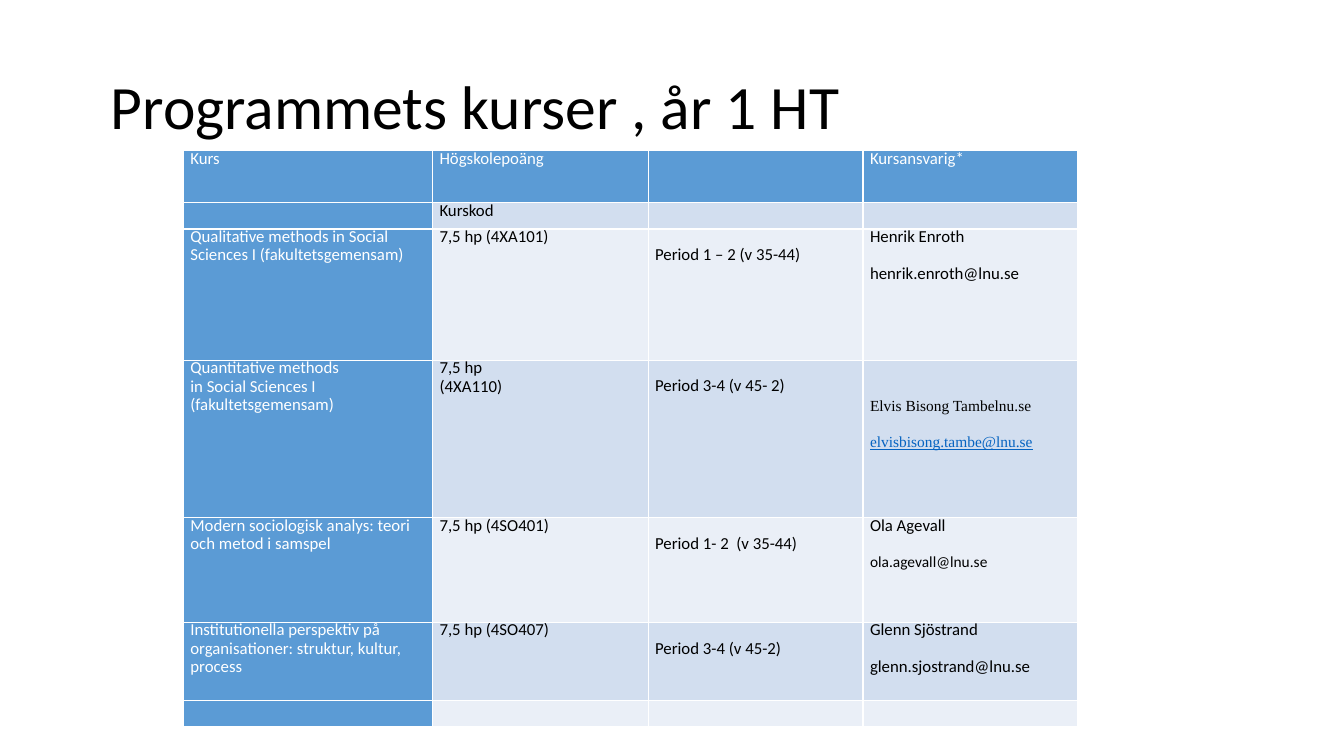
from dataclasses import dataclass

from lxml.etree import SubElement
from pptx import Presentation
from pptx.dml.color import RGBColor
from pptx.enum.text import MSO_ANCHOR
from pptx.oxml.ns import qn
from pptx.util import Pt

BLACK = RGBColor(0x00, 0x00, 0x00)
WHITE = RGBColor(0xFF, 0xFF, 0xFF)
BLUE = RGBColor(0x5B, 0x9B, 0xD5)
DARK_BAND = RGBColor(0xD2, 0xDE, 0xEF)
LIGHT_BAND = RGBColor(0xEA, 0xEF, 0xF7)
LINK_BLUE = RGBColor(0x05, 0x63, 0xC1)

LINE = 13
ROW_UNIT = 18.72
COLUMN_WIDTHS = [178, 154, 153.5, 153.5]
ROW_UNITS = [2, 1, 5, 6, 4, 3, 1]


@dataclass
class Entry:
    text: str
    gap: int = 0
    size: int = 12
    font: str = "Calibri"
    color: RGBColor = BLACK
    underline: bool = False


def period(text):
    return [Entry(text, gap=1)]


def contact(name, address, size=12):
    return [Entry(name), Entry(address, gap=1, size=size)]


def plain(*lines):
    return [Entry(line) for line in lines]


COURSES = [
    [plain("Kurs"), plain("Högskolepoäng"), [], plain("Kursansvarig*")],
    [[], plain("Kurskod"), [], []],
    [
        plain("Qualitative methods in Social Sciences I (fakultetsgemensam)"),
        plain("7,5 hp (4XA101)"),
        period("Period 1 – 2 (v 35-44)"),
        contact("Henrik Enroth", "henrik.enroth@lnu.se"),
    ],
    [
        plain("Quantitative methods", "in Social Sciences I (fakultetsgemensam)"),
        plain("7,5 hp", "(4XA110)"),
        period("Period 3-4 (v 45- 2)"),
        [
            Entry("Elvis Bisong Tambelnu.se", 2, 11, "Times New Roman"),
            Entry("elvisbisong.tambe@lnu.se", 1, 11, "Times New Roman", LINK_BLUE, True),
        ],
    ],
    [
        plain("Modern sociologisk analys: teori och metod i samspel"),
        plain("7,5 hp (4SO401)"),
        period("Period 1- 2  (v 35-44)"),
        contact("Ola Agevall", "ola.agevall@lnu.se", size=11),
    ],
    [
        plain("Institutionella perspektiv på organisationer: struktur, kultur,", "process"),
        plain("7,5 hp (4SO407)"),
        period("Period 3-4 (v 45-2)"),
        contact("Glenn Sjöstrand", "glenn.sjostrand@lnu.se"),
    ],
    [[], [], [], []],
]


class SlideBuilder:
    def __init__(self, slide):
        self.slide = slide
        self.font = "Calibri"
        self.border = WHITE

    def title(self, text, left, top, width, height):
        box = self.slide.shapes.add_textbox(Pt(left), Pt(top), Pt(width), Pt(height))
        frame = box.text_frame
        frame.word_wrap = True
        frame.vertical_anchor = MSO_ANCHOR.MIDDLE
        para = frame.paragraphs[0]
        para.text = text
        para.line_spacing = 0.9
        para.font.size = Pt(44)
        para.font.name = self.font
        para.font.color.rgb = BLACK

    def table(self, rows, left, top):
        shape = self.slide.shapes.add_table(
            len(rows), len(COLUMN_WIDTHS), Pt(left), Pt(top),
            Pt(sum(COLUMN_WIDTHS)), Pt(ROW_UNIT * sum(ROW_UNITS)))
        table = shape.table
        table.first_row = False
        table.horz_banding = False
        for column, width in zip(table.columns, COLUMN_WIDTHS):
            column.width = Pt(width)
        for row, units in zip(table.rows, ROW_UNITS):
            row.height = Pt(ROW_UNIT * units)
        for row_number, row in enumerate(rows):
            for column_number, entries in enumerate(row):
                heading = row_number == 0 or column_number == 0
                band = DARK_BAND if row_number % 2 else LIGHT_BAND
                cell = table.cell(row_number, column_number)
                self.cell(cell, entries, BLUE if heading else band, heading)

    def cell(self, cell, entries, fill, heading):
        cell.margin_left = cell.margin_right = Pt(5)
        cell.margin_top = Pt(entries[0].gap * LINE if entries else 0)
        cell.margin_bottom = Pt(0)
        self.borders(cell)
        cell.fill.solid()
        cell.fill.fore_color.rgb = fill
        frame = cell.text_frame
        if not entries:
            SubElement(frame.paragraphs[0]._p, qn("a:endParaRPr"), sz="1200")
        for number, entry in enumerate(entries):
            para = frame.add_paragraph() if number else frame.paragraphs[0]
            para.text = entry.text
            para.line_spacing = Pt(LINE)
            if number and entry.gap:
                para.space_before = Pt(entry.gap * LINE)
            para.font.size = Pt(entry.size)
            para.font.name = entry.font
            para.font.color.rgb = WHITE if heading else entry.color
            if entry.underline:
                para.font.underline = True

    def borders(self, cell):
        properties = cell._tc.get_or_add_tcPr()
        for side in ("a:lnL", "a:lnR", "a:lnT", "a:lnB"):
            line = SubElement(properties, qn(side), w=str(Pt(1)))
            solid = SubElement(line, qn("a:solidFill"))
            SubElement(solid, qn("a:srgbClr"), val=str(self.border))


def main():
    deck = Presentation()
    deck.slide_width = Pt(960)
    deck.slide_height = Pt(540)
    page = SlideBuilder(deck.slides.add_slide(deck.slide_layouts[6]))
    page.title("Programmets kurser , år 1 HT", 72, 49, 816, 58)
    page.table(COURSES, 131, 107.5)
    deck.save("out.pptx")


if __name__ == "__main__":
    main()
